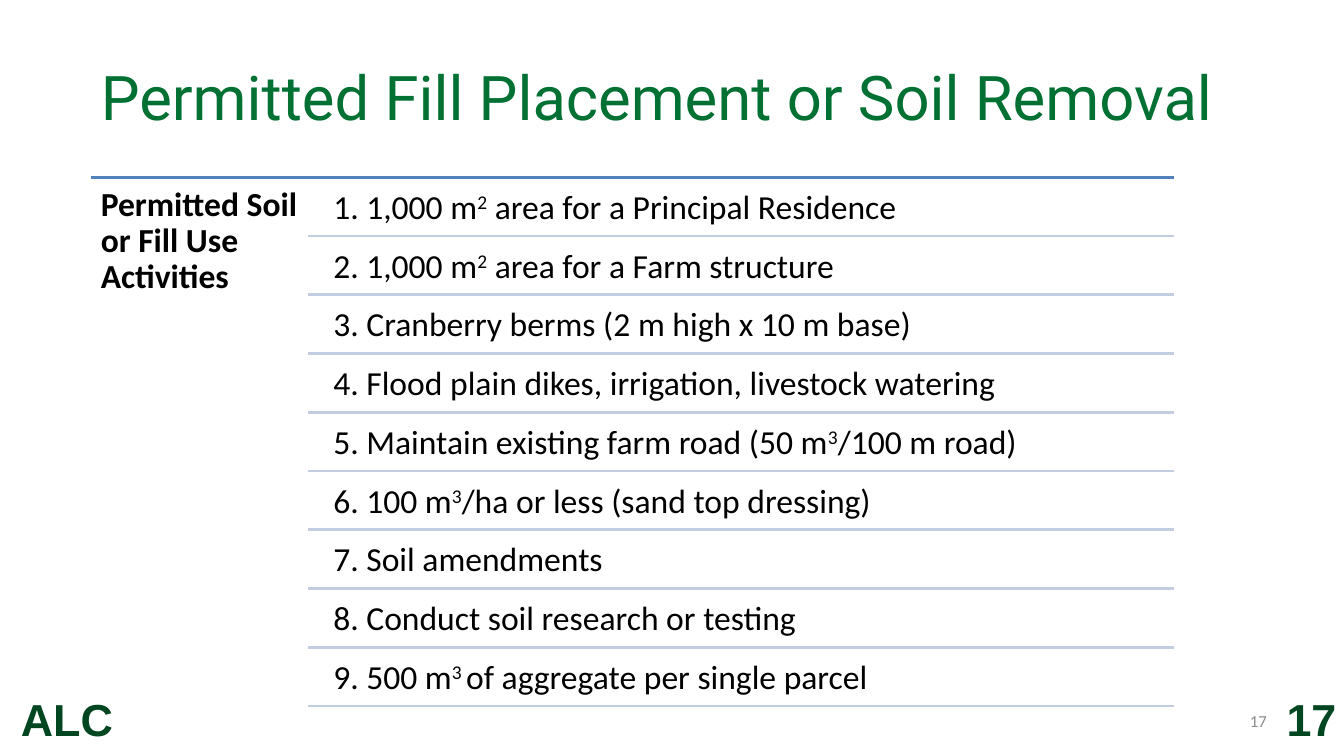
from dataclasses import dataclass

import pptx
import pptx.dml.color
import pptx.enum.shapes
import pptx.enum.text
import pptx.oxml
import pptx.oxml.ns
import pptx.presentation
import pptx.shapes.autoshape
import pptx.slide
import pptx.text.text
import pptx.util
from pptx.util import Cm

COLOURS: dict[str, str] = {
    "title": "007033",
    "footer": "004620",
    "page": "8C8C8C",
    "text": "000000",
    "top rule": "4F81BD",
    "row rule": "C2CDE1",
}

ALIGN = pptx.enum.text.PP_ALIGN
ANCHOR = pptx.enum.text.MSO_ANCHOR

TABLE_LEFT, TABLE_TOP, TABLE_RIGHT = 2.29, 4.47, 29.59
RULE_LEFT, ROW_LEFT = 7.75, 8.15
ROW_TOP, ROW_HEIGHT, ROW_PITCH = 4.55, 1.4, 1.48
CELL_INSET = 0.25

# Text between carets is raised
ACTIVITIES: list[str] = [
    "1. 1,000 m^2^ area for a Principal Residence",
    "2. 1,000 m^2^ area for a Farm structure",
    "3. Cranberry berms (2 m high x 10 m base)",
    "4. Flood plain dikes, irrigation, livestock watering",
    "5. Maintain existing farm road (50 m^3^/100 m road)",
    "6. 100 m^3^/ha or less (sand top dressing)",
    "7. Soil amendments",
    "8. Conduct soil research or testing",
    "9. 500 m^3 ^of aggregate per single parcel",
]


@dataclass(frozen=True)
class TextStyle:
    font: str
    size: float
    colour: str
    bold: bool = False
    align: ALIGN = ALIGN.LEFT
    anchor: ANCHOR = ANCHOR.TOP
    line_spacing: float = 1.0
    vertical_inset: float = 0.13


@dataclass(frozen=True)
class Label:
    text: str
    left: float
    top: float
    width: float
    height: float
    style: TextStyle


TITLE = TextStyle("Roboto", 44, "title", anchor=ANCHOR.MIDDLE)
FOOTER = TextStyle("Arial", 32, "footer", bold=True, align=ALIGN.RIGHT)
PAGE = TextStyle("Calibri", 12, "page", align=ALIGN.RIGHT, anchor=ANCHOR.MIDDLE)
HEADING = TextStyle("Calibri", 24, "text", bold=True, line_spacing=0.9,
                    vertical_inset=CELL_INSET)
ROW = TextStyle("Calibri", 24, "text", line_spacing=0.9,
                vertical_inset=CELL_INSET)


def rgb(name: str) -> pptx.dml.color.RGBColor:
    return pptx.dml.color.RGBColor.from_string(COLOURS[name])


def add_runs(paragraph: pptx.text.text._Paragraph, text: str) -> None:
    for index, part in enumerate(text.split("^")):
        run = paragraph.add_run()
        run.text = part
        if index % 2:
            run._r.get_or_add_rPr().set("baseline", "30000")


def fill_label(shape: pptx.shapes.autoshape.Shape, label: Label) -> None:
    style = label.style
    shape.left, shape.top = Cm(label.left), Cm(label.top)
    shape.width, shape.height = Cm(label.width), Cm(label.height)
    frame = shape.text_frame
    frame.word_wrap = True
    frame.auto_size = pptx.enum.text.MSO_AUTO_SIZE.NONE
    frame.vertical_anchor = style.anchor
    frame.margin_left = frame.margin_right = Cm(0.25)
    frame.margin_top = frame.margin_bottom = Cm(style.vertical_inset)
    paragraph = frame.paragraphs[0]
    add_runs(paragraph, label.text)
    paragraph.alignment = style.align
    paragraph.line_spacing = style.line_spacing
    paragraph.font.name = style.font
    paragraph.font.size = pptx.util.Pt(style.size)
    paragraph.font.bold = style.bold
    paragraph.font.color.rgb = rgb(style.colour)


def add_label(slide: pptx.slide.Slide, label: Label) -> None:
    fill_label(slide.shapes.add_textbox(0, 0, 0, 0), label)


def add_rule(slide: pptx.slide.Slide, left: float, top: float, colour: str) -> None:
    rule = slide.shapes.add_connector(
        pptx.enum.shapes.MSO_CONNECTOR.STRAIGHT,
        Cm(left), Cm(top), Cm(TABLE_RIGHT), Cm(top))
    rule.line.color.rgb = rgb(colour)
    rule.line.width = pptx.util.Pt(2)
    rule._element.spPr.append(
        pptx.oxml.parse_xml(f"<a:effectLst {pptx.oxml.ns.nsdecls('a')}/>"))


def build_slide(presentation: pptx.presentation.Presentation) -> None:
    slide = presentation.slides.add_slide(
        presentation.slide_layouts.get_by_name("Title Only"))

    # Title
    fill_label(slide.shapes.title, Label(
        "Permitted Fill Placement or Soil Removal",
        TABLE_LEFT, 1.04, 33.27, 2.74, TITLE))

    # Footer
    for label in (
        Label("ALC", 0, 17.3, 3.1, 1.63, FOOTER),
        Label("17", 31.29, 17.3, 2.64, 1.63, FOOTER),
        Label("17", 24.28, 17.65, 7.9, 1.02, PAGE),
    ):
        add_label(slide, label)

    # Heading column
    add_rule(slide, TABLE_LEFT, TABLE_TOP, "top rule")
    add_label(slide, Label("Permitted Soil or Fill Use Activities",
                           TABLE_LEFT, TABLE_TOP, 5.5, 13.39, HEADING))

    # Activity rows, each closed by a rule
    for index, activity in enumerate(ACTIVITIES):
        top = ROW_TOP + index * ROW_PITCH
        add_label(slide, Label(activity, ROW_LEFT, top,
                               TABLE_RIGHT - ROW_LEFT, ROW_HEIGHT, ROW))
        add_rule(slide, RULE_LEFT, top + ROW_HEIGHT, "row rule")


def main() -> None:
    presentation = pptx.Presentation()
    presentation.slide_width = Cm(33.87)
    presentation.slide_height = Cm(19.05)
    build_slide(presentation)
    presentation.save("out.pptx")


if __name__ == "__main__":
    main()
